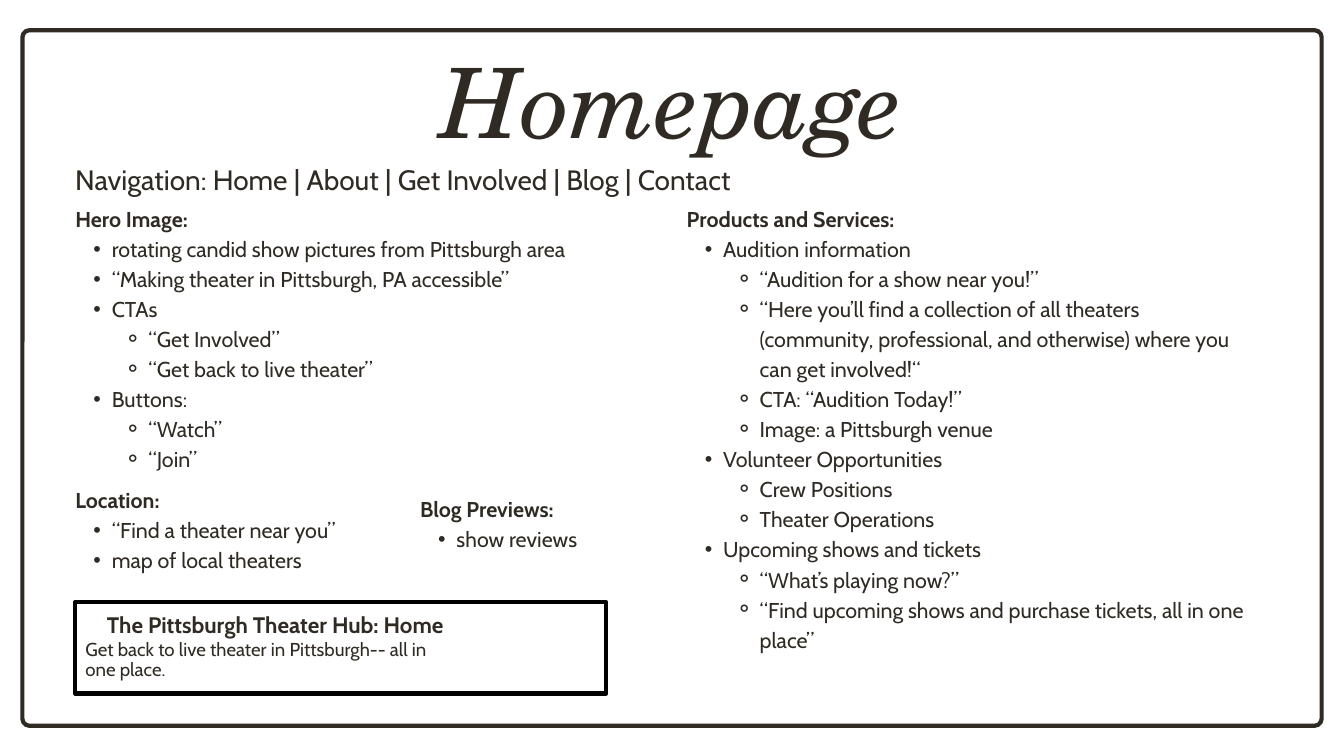
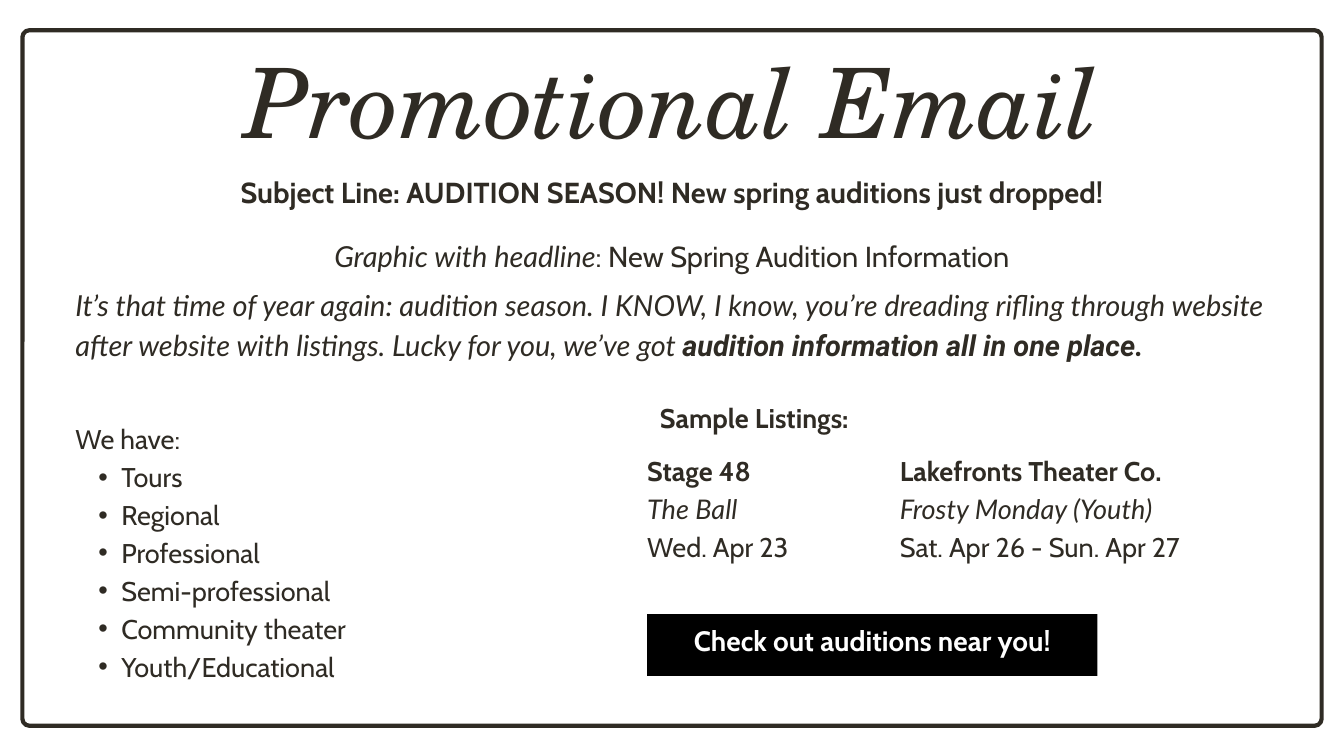
from pptx import Presentation
from pptx.dml.color import RGBColor
from pptx.enum.shapes import MSO_SHAPE
from pptx.enum.text import MSO_ANCHOR, MSO_AUTO_SIZE, PP_ALIGN
from pptx.oxml.ns import qn
from pptx.util import Pt
from lxml.etree import SubElement

# Shared look
INK, BLACK, WHITE = "2F2B24", "000000", "FFFFFF"
TITLE_FONT, TEXT_FONT, ITALIC_FONT, STRONG_FONT = "TeX Gyre Schola", "Cabin", "Lato", "Roboto"
SLIDE_W, SLIDE_H = 1440, 810
MARGIN, CONTENT_W = 80.64, 1278
BULLETS = {1: "•", 2: "⚬"}
CENTER, LEFT = PP_ALIGN.CENTER, PP_ALIGN.LEFT


def color(hex_code):
    return RGBColor.from_string(hex_code)


def place(shape, box):
    shape.left, shape.top, shape.width, shape.height = map(Pt, box)


def prepare(frame, anchor=MSO_ANCHOR.TOP):
    frame.word_wrap = True
    frame.auto_size = MSO_AUTO_SIZE.NONE
    frame.vertical_anchor = anchor
    frame.margin_left = frame.margin_right = frame.margin_top = frame.margin_bottom = 0


def style(font, size, name=TEXT_FONT, bold=False, italic=False, ink=INK):
    font.size, font.name, font.bold, font.italic = Pt(size), name, bold, italic
    font.color.rgb = color(ink)


def add_line(frame, text, size, align=LEFT, leading=1.4, level=0, **look):
    """Add one paragraph; level 0 is plain, deeper levels are bulleted."""
    first = frame.paragraphs[0]
    line = frame.add_paragraph() if first.runs else first
    line.alignment, line.level = align, level
    line.line_spacing = Pt(round(size * leading, 2))
    line.space_before = line.space_after = Pt(0)
    line.add_run().text = text
    style(line.font, size, **look)
    # Indents grow with the text size and the level
    margin = 1.7 * size * level
    properties = line._p.get_or_add_pPr()
    properties.set("marL", str(int(Pt(margin))))
    properties.set("indent", str(-int(Pt(margin / (level + 1))) if level else 0))
    marker = properties.makeelement(qn("a:buChar" if level else "a:buNone"), {})
    if level:
        marker.set("char", BULLETS[level])
    properties.find(qn("a:spcAft")).addnext(marker)
    return line


def add_mixed_line(frame, parts, size, align=LEFT):
    """Add one paragraph whose parts differ in font."""
    (text, look), *others = parts
    line = add_line(frame, text, size, align)
    style(line.runs[0].font, size, **look)
    for text, look in others:
        run = line.add_run()
        run.text = text
        style(run.font, size, **look)


def text_area(slide, box):
    area = slide.shapes.add_textbox(*map(Pt, box))
    prepare(area.text_frame)
    return area.text_frame


def panel(slide, box, kind=MSO_SHAPE.RECTANGLE, fill=None, line=None):
    shape = slide.shapes.add_shape(kind, *map(Pt, box))
    shape.shadow.inherit = False
    if fill:
        shape.fill.solid()
        shape.fill.fore_color.rgb = color(fill)
    else:
        shape.fill.background()
    if line:
        shape.line.color.rgb = color(line)
        shape.line.width = Pt(4.5)
    else:
        shape.line.fill.background()
    return shape


# Slide base: rounded border and title
def framed_slide(deck, layout, title):
    slide = deck.slides.add_slide(deck.slide_layouts[layout])
    border = panel(slide, (24, 32.4, SLIDE_W - 48, 745.2), MSO_SHAPE.ROUNDED_RECTANGLE, line=INK)
    border.adjustments[0] = 0.01
    heading = slide.shapes.title
    place(heading, (MARGIN, 64.8, CONTENT_W, 109.4))
    prepare(heading.text_frame)
    add_line(heading.text_frame, title, 104, CENTER, leading=1, name=TITLE_FONT, italic=True)
    return slide


def outline(placeholder, box, heading, items, size, bold=True):
    place(placeholder, box)
    frame = placeholder.text_frame
    prepare(frame)
    add_line(frame, heading, size, bold=bold)
    for level, text in items:
        add_line(frame, text, size, level=level)


# Search result preview
def search_snippet(slide, box):
    left, top, width, height = box
    panel(slide, box, line=BLACK)
    headline = text_area(slide, (left + 10.8, top + 5, 406.8, 31))
    add_line(headline, "The Pittsburgh Theater Hub: Home", 24, CENTER, bold=True)
    summary = text_area(slide, (left + 10.8, top + 41, 424, 43.2))
    for text in ("Get back to live theater in Pittsburgh-- all in", "one place."):
        add_line(summary, text, 20, leading=1.08)


# Sample listings: heading, columns and button
def listings(slide, box):
    left, top, width, height = box
    heading = text_area(slide, (left + 1.4, top, 226.8, 40.6))
    add_line(heading, "Sample Listings:", 29, CENTER, bold=True)
    shows = [
        (0, 213, "Stage 48", "The Ball", "Wed. Apr 23"),
        (270.7, 369.4, "Lakefronts Theater Co.", "Frosty Monday (Youth)", "Sat. Apr 26 - Sun. Apr 27"),
    ]
    for offset, column_width, company, show, date in shows:
        listing = text_area(slide, (left + offset, top + 56.2, column_width, 122))
        add_line(listing, company, 29, bold=True)
        add_line(listing, show, 29, name=ITALIC_FONT, italic=True)
        add_line(listing, date, 29)
    button = panel(slide, (left, top + height - 66.2, 482.4, 66.2), fill=BLACK)
    prepare(button.text_frame, MSO_ANCHOR.MIDDLE)
    button.text_frame.margin_bottom = Pt(16.6)
    add_line(button.text_frame, "Check out auditions near you!", 30, CENTER, bold=True, ink=WHITE)


def homepage(deck):
    slide = framed_slide(deck, 4, "Homepage")
    navigation = text_area(slide, (MARGIN, 168.5, 1137.6, 42))
    add_line(navigation, "Navigation: Home | About | Get Involved | Blog | Contact", 30)
    sections = [
        ((MARGIN, 216, 606, 290), "Hero Image:", [
            (1, "rotating candid show pictures from Pittsburgh area"),
            (1, "“Making theater in Pittsburgh, PA accessible”"),
            (1, "CTAs"),
            (2, "“Get Involved”"),
            (2, "“Get back to live theater”"),
            (1, "Buttons:"),
            (2, "“Watch”"),
            (2, "“Join”"),
        ]),
        ((MARGIN, 517, 360, 97), "Location:", [
            (1, "“Find a theater near you”"),
            (1, "map of local theaters"),
        ]),
        ((735.8, 216, 606, 483), "Products and Services:", [
            (1, "Audition information"),
            (2, "“Audition for a show near you!”"),
            (2, "“Here you’ll find a collection of all theaters (community, professional, "
                "and otherwise) where you can get involved!“"),
            (2, "CTA: “Audition Today!”"),
            (2, "Image: a Pittsburgh venue"),
            (1, "Volunteer Opportunities"),
            (2, "Crew Positions"),
            (2, "Theater Operations"),
            (1, "Upcoming shows and tickets"),
            (2, "“What’s playing now?”"),
            (2, "“Find upcoming shows and purchase tickets, all in one place”"),
        ]),
        ((450, 526.5, 270, 65), "Blog Previews:", [(1, "show reviews")]),
    ]
    for number, (box, heading, items) in enumerate(sections, 1):
        outline(slide.placeholders[number], box, heading, items, 23)
    search_snippet(slide, (MARGIN, 645.1, 568.8, 97.9))


def promotional_email(deck):
    slide = framed_slide(deck, 1, "Promotional Email")
    italic = {"name": ITALIC_FONT, "italic": True}
    subject = text_area(slide, (MARGIN, 180.7, CONTENT_W, 43.4))
    add_line(subject, "Subject Line: AUDITION SEASON! New spring auditions just dropped!",
             31, CENTER, bold=True)
    graphic = text_area(slide, (MARGIN, 249.1, CONTENT_W, 43.4))
    add_mixed_line(graphic, [("Graphic with headline", italic),
                             (": New Spring Audition Information", {})], 31, CENTER)
    message = text_area(slide, (MARGIN, 301.7, CONTENT_W, 127))
    add_mixed_line(message, [
        ("It’s that time of year again: audition season. I KNOW, I know, you’re dreading rifling "
         "through website after website with listings. Lucky for you, we’ve got ", italic),
        ("audition information all in one place.",
         {"name": STRONG_FONT, "bold": True, "italic": True}),
    ], 31)
    kinds = ("Tours", "Regional", "Professional", "Semi-professional",
             "Community theater", "Youth/Educational")
    outline(slide.placeholders[1], (MARGIN, 447.1, 340, 284.2), "We have:",
            [(1, kind) for kind in kinds], 29, bold=False)
    listings(slide, (693.4, 424.8, 640, 299.5))


def main():
    deck = Presentation()
    deck.slide_width, deck.slide_height = Pt(SLIDE_W), Pt(SLIDE_H)
    homepage(deck)
    promotional_email(deck)
    deck.save("out.pptx")


if __name__ == "__main__":
    main()
